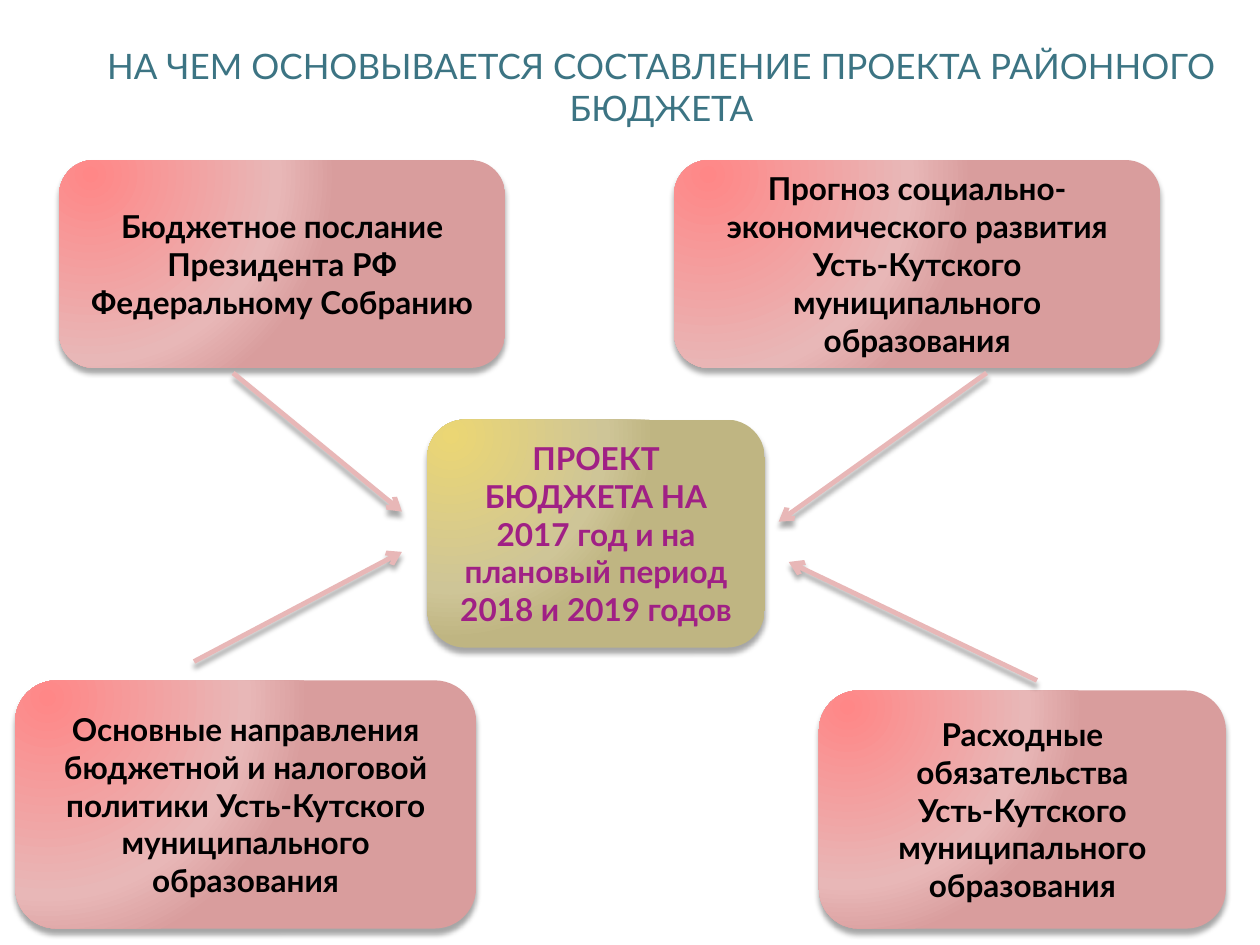
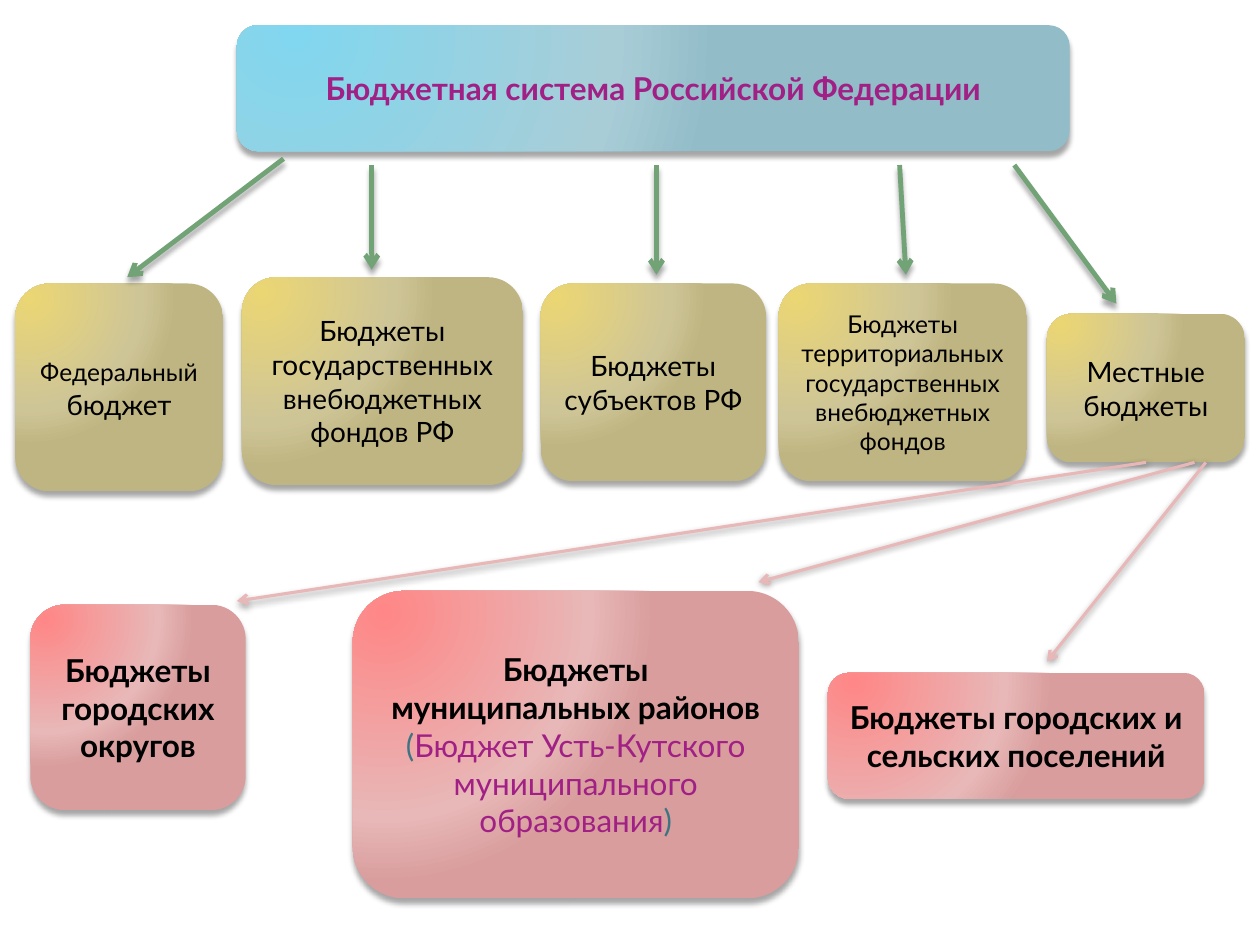
"""Build two slides on what the district budget draft rests on and how the budget system is layered."""
from dataclasses import dataclass
from typing import Optional

from lxml.etree import SubElement
from pptx import Presentation
from pptx.dml.color import RGBColor
from pptx.enum.shapes import MSO_CONNECTOR as Connector, MSO_SHAPE as Preset
from pptx.enum.text import MSO_ANCHOR as Anchor, PP_ALIGN as Align
from pptx.oxml.ns import qn
from pptx.oxml.xmlchemy import BaseOxmlElement as Element
from pptx.shapes.autoshape import Shape
from pptx.slide import Slide
from pptx.text.text import TextFrame
from pptx.util import Emu, Pt

PX = 914400 // 100
FONT = "Lato"
BOTTOM = 2
COLORS = {
    "black": "000000",
    "teal": "3C7483",
    "purple": "A02085",
    "rose": "E8B7B7",
    "green": "72A376",
}
GRADIENTS = {
    "gold": ("EBD674", "CEC597", "BFB582"),
    "red": ("FF8787", "E8B7B7", "D99D9D"),
    "blue": ("81D7EF", "A8CDD7", "92BCC8"),
}
STOPS = (0, 76, 100)


@dataclass(frozen=True)
class Words:
    """A run of text with its look."""

    text: str
    size: int = 18
    color: str = "black"
    bold: bool = False


@dataclass(frozen=True)
class Shadow:
    """An outer shadow: percent opacity, points and degrees."""

    opacity: int = 35
    blur: int = 3
    distance: int = 3
    angle: int = 90


@dataclass(frozen=True)
class Card:
    """A rounded card holding paragraphs of runs."""

    box: tuple[int, int, int, int]
    gradient: str
    paragraphs: tuple[tuple[Words, ...], ...]


@dataclass(frozen=True)
class Arrow:
    """An arrow between two points, with the card it starts from if joined."""

    start: tuple[int, int]
    end: tuple[int, int]
    color: str
    width: float = 2.75
    shadow: Shadow = Shadow()
    source: Optional[int] = None


def px(value: int) -> Emu:
    """Turn px into EMU."""
    return Emu(value * PX)


def bold(text: str, color: str = "black") -> tuple[Words, ...]:
    """Return a bold paragraph."""
    return (Words(text, color=color, bold=True),)


def write(frame: TextFrame, paragraphs: tuple[tuple[Words, ...], ...]) -> None:
    """Fill a text frame with centred paragraphs, run by run."""
    frame.word_wrap = True
    frame.vertical_anchor = Anchor.MIDDLE
    for index, words_list in enumerate(paragraphs):
        paragraph = frame.add_paragraph() if index else frame.paragraphs[0]
        paragraph.alignment = Align.CENTER
        for words in words_list:
            run = paragraph.add_run()
            run.text = words.text
            run.font.name = FONT
            run.font.size = Pt(words.size)
            run.font.bold = words.bold
            run.font.color.rgb = RGBColor.from_string(COLORS[words.color])


def add_color(parent: Element, value: str) -> Element:
    """Append an RGB colour element."""
    return SubElement(parent, qn("a:srgbClr"), val=value)


def cast_shadow(effects: Element, shadow: Shadow) -> None:
    """Append an outer shadow to an effect list."""
    outer = SubElement(
        effects, qn("a:outerShdw"), blurRad=str(Pt(shadow.blur)), dist=str(Pt(shadow.distance)),
        dir=str(shadow.angle * 60000), algn="ctr", rotWithShape="0",
    )
    color = add_color(outer, COLORS["black"])
    SubElement(color, qn("a:alpha"), val=str(shadow.opacity * 1000))


def fill_radial(properties: Element, gradient: str) -> None:
    """Give a shape a round gradient that starts near the top left."""
    fill = SubElement(properties, qn("a:gradFill"), rotWithShape="1")
    stops = SubElement(fill, qn("a:gsLst"))
    for position, value in zip(STOPS, GRADIENTS[gradient]):
        add_color(SubElement(stops, qn("a:gs"), pos=str(position * 1000)), value)
    circle = SubElement(fill, qn("a:path"), path="circle")
    SubElement(circle, qn("a:fillToRect"), l="15000", t="15000", r="100000", b="100000")
    properties.find(qn("a:prstGeom")).addnext(fill)


def add_card(slide: Slide, card: Card) -> Shape:
    """Draw one card."""
    shape = slide.shapes.add_shape(Preset.ROUNDED_RECTANGLE, *map(px, card.box))
    properties = shape.element.spPr
    fill_radial(properties, card.gradient)
    shape.line.fill.background()
    shape.shadow.inherit = False
    cast_shadow(properties.find(qn("a:effectLst")), Shadow())
    write(shape.text_frame, card.paragraphs)
    return shape


def add_arrow(slide: Slide, arrow: Arrow, cards: list[Shape]) -> None:
    """Draw one arrow, joined to its source card when it has one."""
    connector = slide.shapes.add_connector(
        Connector.STRAIGHT, *map(px, arrow.start + arrow.end)
    )
    if arrow.source is not None:
        connector.begin_connect(cards[arrow.source], BOTTOM)
    connector.line.color.rgb = RGBColor.from_string(COLORS[arrow.color])
    connector.line.width = Pt(arrow.width)
    properties = connector.element.spPr
    SubElement(properties.find(qn("a:ln")), qn("a:tailEnd"), type="arrow")
    cast_shadow(SubElement(properties, qn("a:effectLst")), arrow.shadow)


def add_scheme(slide: Slide, cards: tuple[Card, ...], arrows: tuple[Arrow, ...]) -> None:
    """Draw cards and then the arrows between them."""
    shapes = [add_card(slide, card) for card in cards]
    for arrow in arrows:
        add_arrow(slide, arrow, shapes)


TITLE = Words("НА ЧЕМ ОСНОВЫВАЕТСЯ СОСТАВЛЕНИЕ ПРОЕКТА РАЙОННОГО БЮДЖЕТА", 20, "teal")

BASIS_CARDS = (
    Card((339, 333, 268, 181), "gold", (
        bold("ПРОЕКТ БЮДЖЕТА НА 2017 год и на плановый период 2018 и 2019 годов", "purple"),
    )),
    Card((535, 127, 386, 165), "red", (
        bold("Прогноз социально-экономического развития Усть-Кутского муниципального образования"),
    )),
    Card((47, 127, 354, 165), "red", (
        bold("Бюджетное послание Президента РФ Федеральному Собранию"),
    )),
    Card((650, 548, 323, 189), "red", (
        bold("Расходные обязательства"),
        bold("Усть-Кутского муниципального образования"),
    )),
    Card((12, 540, 366, 197), "red", (
        bold("Основные направления бюджетной и налоговой политики "
             "Усть-Кутского муниципального образования"),
    )),
)
BASIS_ARROWS = tuple(
    Arrow(start, end, "rose")
    for start, end in (
        ((185, 296), (319, 406)),
        ((783, 296), (618, 414)),
        ((154, 525), (319, 438)),
        ((823, 540), (626, 446)),
    )
)

SYSTEM_CARDS = (
    Card((188, 20, 661, 100), "blue", (
        bold("Бюджетная система Российской Федерации", "purple"),
    )),
    Card((12, 225, 165, 165), "gold", (
        (Words("Федеральный", 14), Words(" бюджет", 16)),
    )),
    Card((192, 220, 223, 165), "gold", (
        (Words("Бюджеты государственных внебюджетных фондов РФ", 16),),
    )),
    Card((429, 225, 179, 157), "gold", ((Words("Бюджеты субъектов РФ", 16),),)),
    Card((618, 225, 197, 157), "gold", (
        (Words("Бюджеты территориальных государственных внебюджетных фондов", 14),),
    )),
    Card((831, 249, 157, 118), "gold", ((Words("Местные бюджеты", 16),),)),
    Card((24, 480, 171, 163), "red", (bold("Бюджеты городских округов"),)),
    Card((280, 469, 354, 244), "red", (
        bold("Бюджеты муниципальных районов"),
        (
            Words("(", color="teal"),
            Words("Бюджет Усть-Кутского муниципального образования", color="purple"),
            Words(")", color="teal"),
        ),
    )),
    Card((657, 534, 299, 100), "red", (bold("Бюджеты городских и сельских поселений"),)),
)
LOCAL_BUDGETS = 5
LEVEL_ARROWS = tuple(
    Arrow(start, end, "green")
    for start, end in (
        ((225, 126), (101, 220)),
        ((295, 131), (295, 214)),
        ((521, 131), (521, 218)),
        ((714, 131), (719, 218)),
        ((805, 131), (886, 241)),
    )
)
LOCAL_ARROWS = tuple(
    Arrow((left, 367), end, "rose", 1.75, Shadow(40, 4, 1, 88), source)
    for left, end, source in (
        (910, (188, 477), LOCAL_BUDGETS),
        (948, (602, 462), None),
        (957, (831, 525), None),
    )
)


def main() -> None:
    """Build and save the presentation."""
    deck = Presentation()
    deck.slide_width, deck.slide_height = px(1000), px(750)
    blank = deck.slide_layouts[6]

    basis = deck.slides.add_slide(blank)
    heading = basis.shapes.add_textbox(*map(px, (50, 29, 950, 79)))
    write(heading.text_frame, ((TITLE,),))
    add_scheme(basis, BASIS_CARDS, BASIS_ARROWS)

    system = deck.slides.add_slide(blank)
    add_scheme(system, SYSTEM_CARDS, LEVEL_ARROWS + LOCAL_ARROWS)

    deck.save("out.pptx")


if __name__ == "__main__":
    main()
